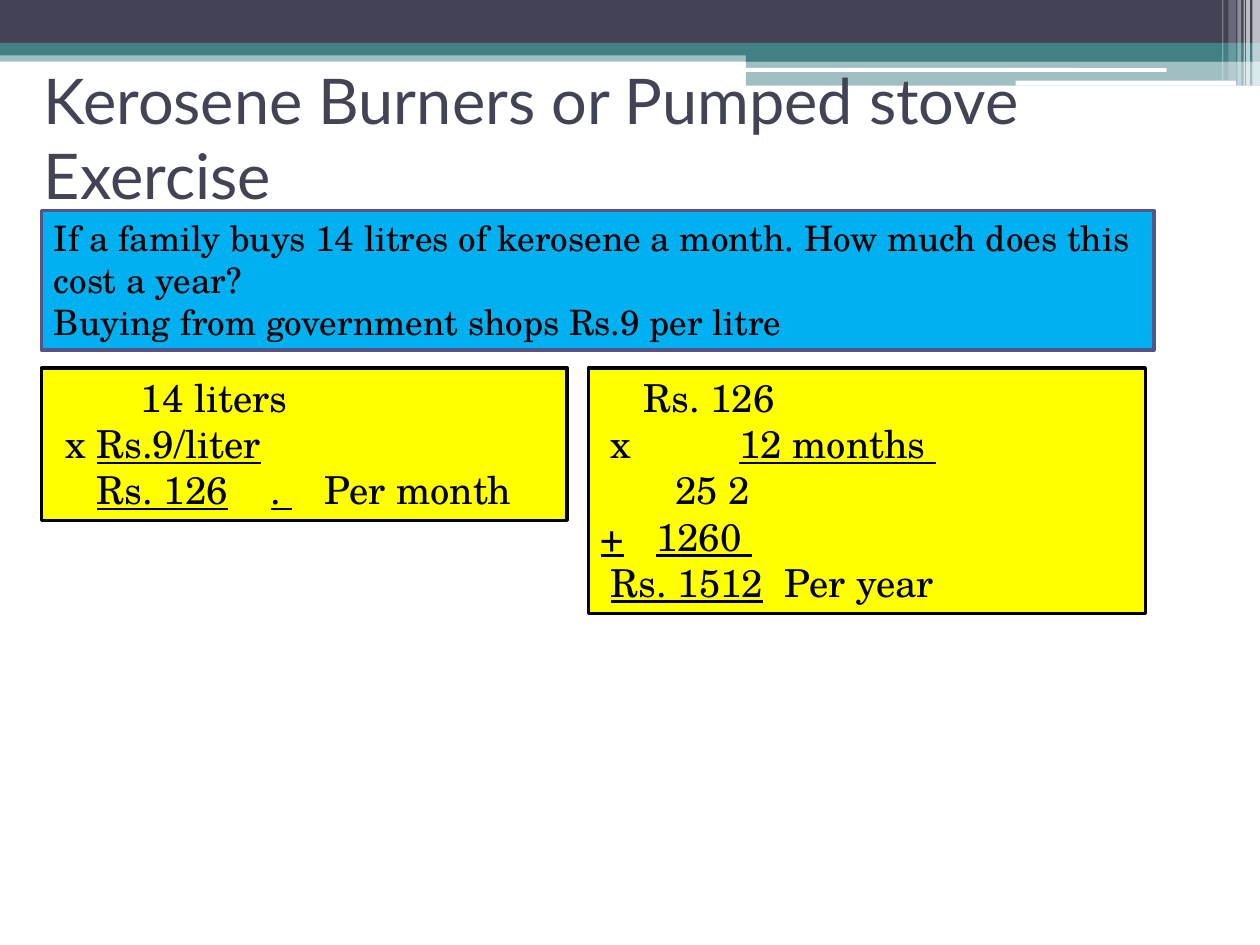
from lxml.etree import SubElement
from pptx import Presentation
from pptx.dml.color import RGBColor
from pptx.enum.shapes import MSO_SHAPE as SHAPE
from pptx.enum.text import MSO_ANCHOR as ANCHOR, MSO_AUTO_SIZE as AUTO, PP_ALIGN as ALIGN
from pptx.oxml.ns import qn
from pptx.util import Inches, Pt

NAVY, TEAL, WHITE, BLACK = "424456", "438086", "FFFFFF", "000000"
SANS, SERIF = "Lato", "TeX Gyre Schola"

# left, top, width, height, colour, opacity in percent
BANDS = [
    (0, 0.4, 10, 0.09, TEAL, 50),
    (0, 0, 10, 0.34, NAVY, 100),
    (0, 0.34, 10, 0.1, TEAL, 100),
    (5.92, 0.39, 4.08, 0.1, TEAL, 100),
    (5.92, 0.48, 4.08, 0.2, TEAL, 50),
]
WHITE_BARS = [(5.91, 0.54, 3.35, 0.03), (8.06, 0.64, 1.75, 0.04)]
# left, width, height, opacity in percent
STRIPES = [
    (9.94, 0.06, 0.68, 65),
    (9.89, 0.03, 0.68, 65),
    (9.87, 0.01, 0.68, 60),
    (9.82, 0.03, 0.68, 40),
    (9.75, 0.06, 0.64, 20),
    (9.7, 0.01, 0.64, 30),
]

# A line is (tab stops in inches, [(text, underlined), ...])
TITLE = [((), [("Kerosene Burners or Pumped stove Exercise", False)])]
QUESTION = [
    ((), [("If a family buys 14 litres of kerosene a month. "
           "How much does this cost a year?", False)]),
    ((), [("Buying from government shops Rs.9 per litre", False)]),
]
PER_MONTH = [
    ((0.69,), [("\t14 liters", False)]),
    ((0.09, 0.34), [("\tx\t", False), ("Rs.9/liter", True)]),
    ((0.34, 1.72, 2.15), [("\t", False), ("Rs. 126\t. ", True), ("\tPer month", False)]),
]
PER_YEAR = [
    ((0.34,), [("\tRs. 126", False)]),
    ((0.08, 0.34, 1.1), [("\tx\t", False), ("\t12 months ", True)]),
    ((0.59,), [("\t25 2", False)]),
    ((0.44,), [("+\t1260 ", True)]),
    ((0.08, 1.46), [("\tRs. 1512\t", True), ("Per year", False)]),
]
# place, fill, line colour, text size, lines
PANELS = [
    ((0.33, 1.67, 8.83, 1.11), "00B0F0", "53548A", 20, QUESTION),
    ((0.33, 2.92, 4.17, 1.21), "FFFF00", BLACK, 22, PER_MONTH),
    ((4.67, 2.92, 4.42, 1.95), "FFFF00", BLACK, 22, PER_YEAR),
]


def rgb(value):
    return RGBColor.from_string(value)


def add_block(page, place, fill, opacity=100, kind=SHAPE.RECTANGLE):
    block = page.shapes.add_shape(kind, *map(Inches, place))
    block.shadow.inherit = False
    block.fill.solid()
    block.fill.fore_color.rgb = rgb(fill)
    block.line.fill.background()
    if opacity < 100:
        color = block.fill._xPr.find(qn("a:solidFill"))[0]
        SubElement(color, qn("a:alpha"), val=str(opacity * 1000))
    return block


def write_lines(box, lines, font, size, color, **frame_format):
    frame = box.text_frame
    frame.word_wrap = True
    for name, value in frame_format.items():
        setattr(frame, name, value)
    for index, (stops, spans) in enumerate(lines):
        para = frame.add_paragraph() if index else frame.paragraphs[0]
        para.alignment = ALIGN.LEFT
        if stops:
            tabs = SubElement(para._p.get_or_add_pPr(), qn("a:tabLst"))
            for stop in stops:
                SubElement(tabs, qn("a:tab"), pos=str(Inches(stop)), algn="l")
        for text, underlined in spans:
            span = para.add_run()
            span.text = text
            formats = {"name": font, "size": Pt(size), "underline": underlined}
            for name, value in formats.items():
                setattr(span.font, name, value)
            span.font.color.rgb = rgb(color)


def main():
    deck = Presentation()
    deck.slide_width, deck.slide_height = Inches(10), Inches(7.5)
    page = deck.slides.add_slide(deck.slide_layouts[6])

    for *place, color, opacity in BANDS:
        add_block(page, place, color, opacity)
    for place in WHITE_BARS:
        add_block(page, place, WHITE, kind=SHAPE.ROUNDED_RECTANGLE)
    for left, width, height, opacity in STRIPES:
        add_block(page, (left, 0, width, height), WHITE, opacity)

    title = page.shapes.add_textbox(*map(Inches, (0.25, 0.5, 9, 1.17)))
    write_lines(title, TITLE, SANS, 36, NAVY, vertical_anchor=ANCHOR.MIDDLE)

    for place, fill, line, size, lines in PANELS:
        panel = add_block(page, place, fill)
        panel.line.color.rgb = rgb(line)
        panel.line.width = Pt(2)
        write_lines(panel, lines, SERIF, size, BLACK,
                    vertical_anchor=ANCHOR.TOP, auto_size=AUTO.SHAPE_TO_FIT_TEXT)

    deck.save("out.pptx")


if __name__ == "__main__":
    main()
